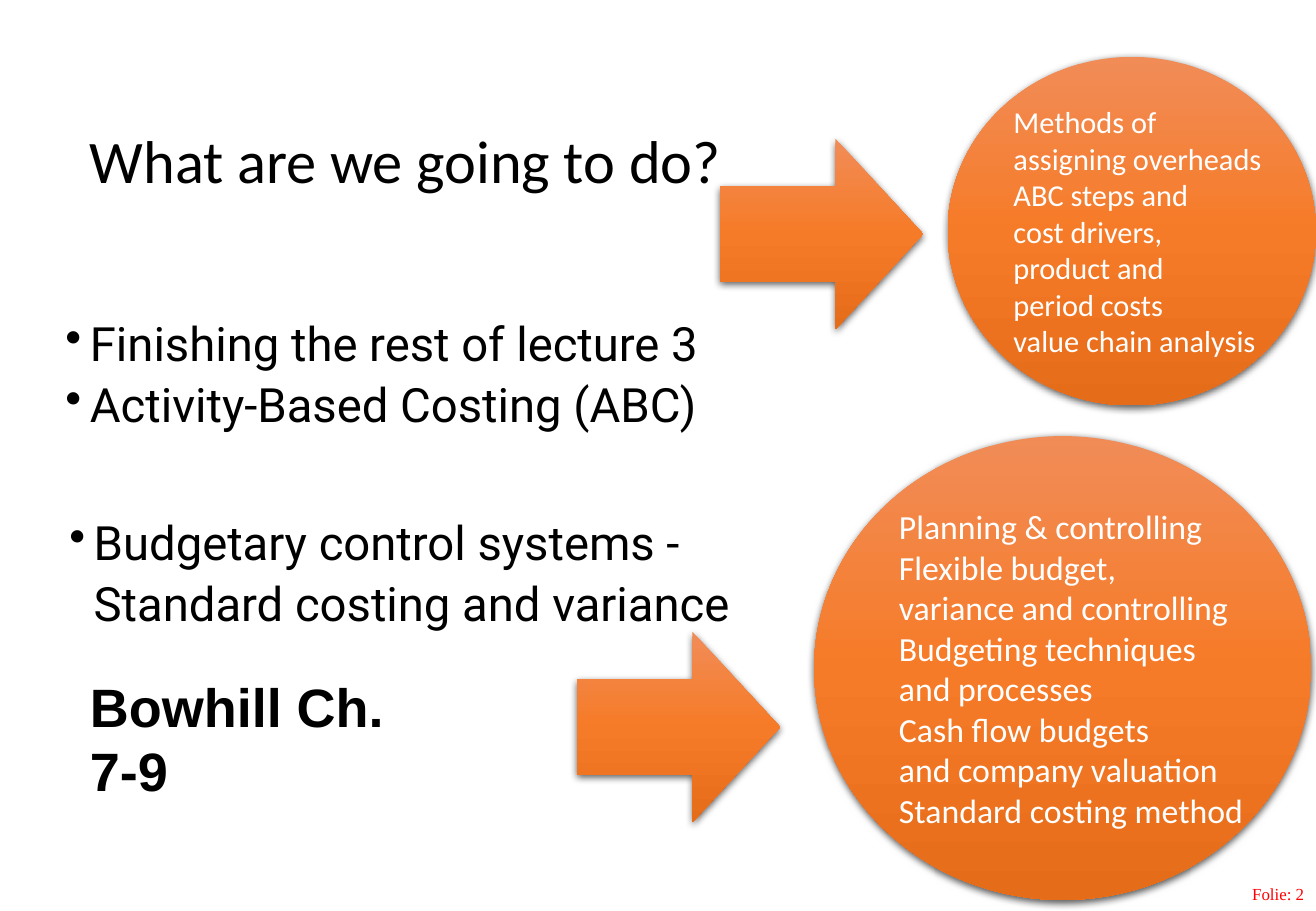
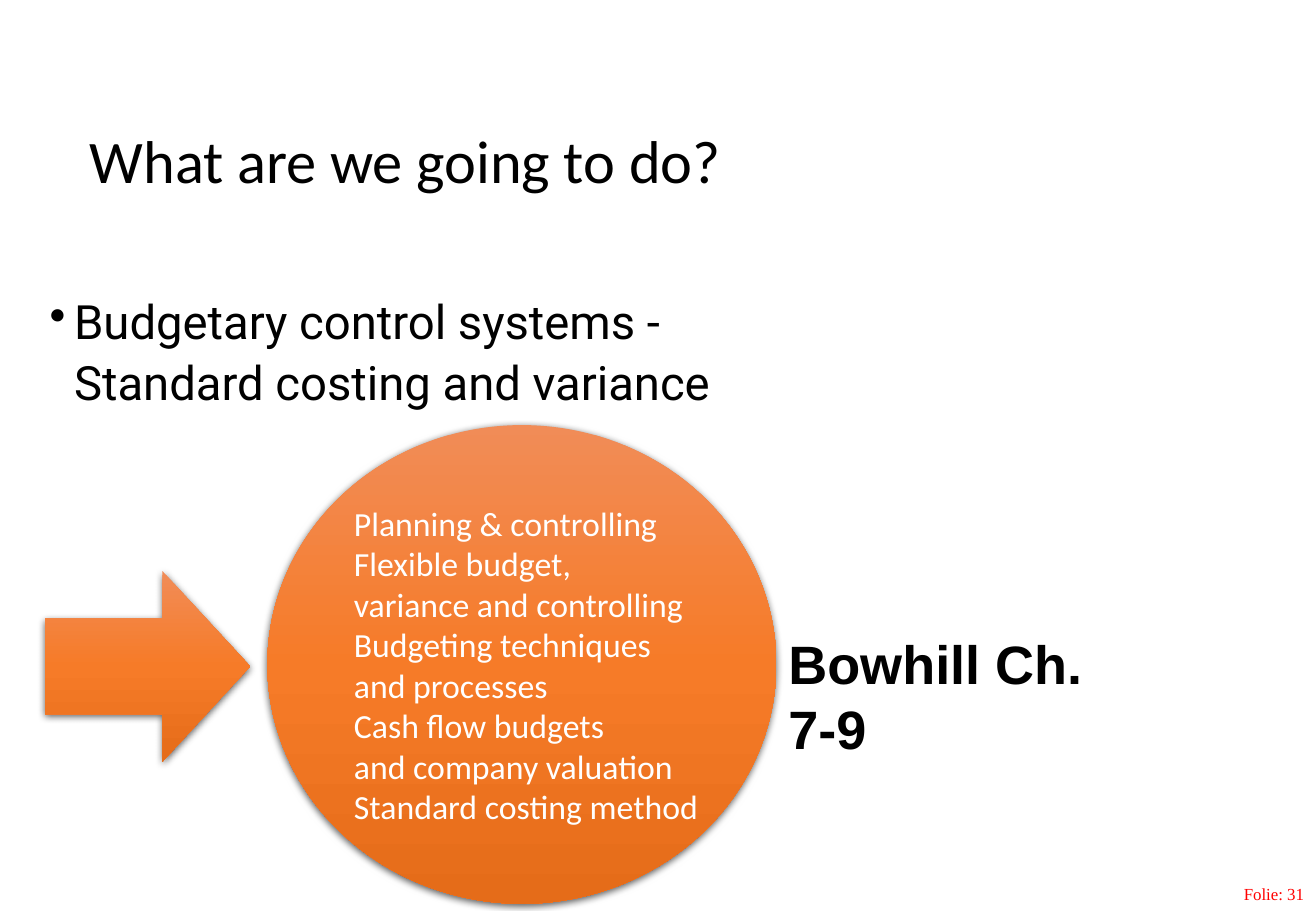
"""Build two agenda slides for a lecture on costing and budgeting."""
import pptx
import pptx.dml.color
import pptx.enum.shapes
import pptx.enum.text
import pptx.oxml
import pptx.oxml.ns
import pptx.util

Cm = pptx.util.Cm
Pt = pptx.util.Pt
ALIGN = pptx.enum.text.PP_ALIGN
ANCHOR = pptx.enum.text.MSO_ANCHOR
PRESET = pptx.enum.shapes.MSO_SHAPE

COLOURS = {
    "text": "000000",
    "inverse": "FFFFFF",
    "footer": "FF0000",
    "shadow": "000000",
    "light": "F18C57",
    "middle": "F67B28",
    "dark": "E56C19",
}
GRADIENT = {0: "light", 50: "middle", 100: "dark"}

FONTS = {
    "title": {"name": "Calibri", "size": Pt(35.8), "colour": "text"},
    "body": {"name": "Roboto", "size": Pt(28), "colour": "text"},
    "small circle": {"name": "Calibri", "size": Pt(18), "colour": "inverse"},
    "large circle": {"name": "Calibri", "size": Pt(20), "colour": "inverse"},
    "reading": {"name": "Arial", "size": Pt(32), "bold": True, "colour": "text"},
    "footer": {"name": "Times New Roman", "size": Pt(10), "colour": "footer"},
}

LECTURE_TOPICS = ["Finishing the rest of lecture 3", "Activity-Based Costing (ABC)"]
BUDGET_TOPIC = ["Budgetary control systems -", "Standard costing and variance"]
METHODS = [
    "Methods of\vassigning overheads",
    "ABC steps and\vcost drivers,\vproduct and\vperiod costs\vvalue chain analysis",
]
PLANNING = [
    "Planning & controlling\vFlexible budget,\vvariance and controlling",
    "Budgeting techniques",
    "and processes",
    "Cash flow budgets\vand company valuation",
    "Standard costing method",
]
HANGING = Cm(0.51)
ARROW_HEIGHT = 3.99


def write_text(frame, lines, style, **paragraph_format):
    """Fill a text frame with one paragraph per line."""
    frame.text = "\n".join(lines)
    for para in frame.paragraphs:
        for name, value in paragraph_format.items():
            setattr(para, name, value)
        for run in para.runs:
            for name, value in FONTS[style].items():
                if name == "colour":
                    run.font.color.rgb = pptx.dml.color.RGBColor.from_string(COLOURS[value])
                else:
                    setattr(run.font, name, value)


def add_text(page, place, lines, style, frame_format=None, **paragraph_format):
    """Add a wrapping text box and return its frame."""
    frame = page.shapes.add_textbox(*map(Cm, place)).text_frame
    for name, value in {"word_wrap": True, **(frame_format or {})}.items():
        setattr(frame, name, value)
    write_text(frame, lines, style, **paragraph_format)
    return frame


def add_topics(page, place, lines, bullets):
    """Add body lines, of which the first ones carry bullets."""
    sides = ("margin_left", "margin_top", "margin_right", "margin_bottom")
    frame = add_text(page, place, lines, "body", dict.fromkeys(sides, Cm(0.1)),
                     line_spacing=0.9)
    for index, para in enumerate(frame.paragraphs):
        para.space_before = Pt(6 if index else 0)
        properties = para._p.get_or_add_pPr()
        properties.set("marL", str(HANGING))
        if index < bullets:
            properties.set("indent", str(-HANGING))
            mark = pptx.oxml.parse_xml(
                f'<a:buChar {pptx.oxml.ns.nsdecls("a")} char="•"/>')
            properties.append(mark)


def add_glossy_shape(page, preset, place):
    """Add an orange gradient shape with a soft shadow below it."""
    shape = page.shapes.add_shape(preset, *map(Cm, place))
    shape.line.fill.background()
    shape.shadow.inherit = False
    namespace = pptx.oxml.ns.nsdecls("a")
    stops = "".join(
        f'<a:gs pos="{position * 1000}"><a:srgbClr val="{COLOURS[name]}"/></a:gs>'
        for position, name in GRADIENT.items())
    gradient = pptx.oxml.parse_xml(
        f'<a:gradFill {namespace} rotWithShape="1"><a:gsLst>{stops}</a:gsLst>'
        '<a:lin ang="5400000" scaled="0"/></a:gradFill>')
    shadow = pptx.oxml.parse_xml(
        f'<a:outerShdw {namespace} blurRad="{Pt(4.5)}" dist="{Pt(1.5)}" dir="5400000"'
        f' rotWithShape="0"><a:srgbClr val="{COLOURS["shadow"]}">'
        '<a:alpha val="63000"/></a:srgbClr></a:outerShdw>')
    properties = shape._element.spPr
    properties.find(pptx.oxml.ns.qn("a:ln")).addprevious(gradient)
    properties.find(pptx.oxml.ns.qn("a:effectLst")).append(shadow)
    return shape


def add_circle(page, place, lines, style):
    """Add a circle with left-aligned lines."""
    frame = add_glossy_shape(page, PRESET.OVAL, place).text_frame
    frame.word_wrap = False
    frame.vertical_anchor = ANCHOR.MIDDLE
    write_text(frame, lines, style, alignment=ALIGN.LEFT)


def add_arrow(page, left, top, width=4.24):
    """Add a block arrow pointing right."""
    arrow = add_glossy_shape(page, PRESET.RIGHT_ARROW, (left, top, width, ARROW_HEIGHT))
    arrow.adjustments[0] = 0.5
    arrow.adjustments[1] = 0.46


def add_reading(page, left, top):
    """Add the chapters to read."""
    add_text(page, (left, top, 7.62, 2.9), ["Bowhill Ch. 7-9"], "reading")


def add_page(deck, number):
    """Add a page with the shared title and the page number."""
    page = deck.slides.add_slide(deck.slide_layouts[6])
    add_text(page, (18.57, 18.36, 8.94, 0.69), [f"Folie: {number}"], "footer",
             alignment=ALIGN.RIGHT)
    add_text(page, (1.63, 1.83, 24.77, 3.18), ["What are we going to do?"], "title",
             {"vertical_anchor": ANCHOR.MIDDLE}, line_spacing=0.9)
    return page


def add_overview(deck):
    """Add the page with both topics."""
    page = add_page(deck, 2)
    add_topics(page, (1.27, 6.6, 13.79, 3), LECTURE_TOPICS, bullets=2)
    add_circle(page, (19.81, 1.19, 7.7, 7.29), METHODS, "small circle")
    add_arrow(page, 15.06, 2.9)
    add_topics(page, (1.35, 10.77, 14.45, 3), BUDGET_TOPIC, bullets=1)
    add_circle(page, (17.02, 9.12, 10.39, 9.7), PLANNING, "large circle")
    add_reading(page, 1.63, 13.95)
    add_arrow(page, 12.07, 13.21)


def add_budgeting(deck):
    """Add the page with the budgeting topic."""
    page = add_page(deck, 31)
    add_topics(page, (0.94, 6.14, 14.45, 3), BUDGET_TOPIC, bullets=1)
    add_circle(page, (5.59, 8.89, 10.64, 10.01), PLANNING, "large circle")
    add_arrow(page, 0.94, 11.94, 4.29)
    add_reading(page, 16.23, 13.06)


def main():
    """Build and save the deck."""
    deck = pptx.Presentation()
    deck.slide_width, deck.slide_height = Cm(27.51), Cm(19.05)
    add_overview(deck)
    add_budgeting(deck)
    deck.save("out.pptx")


if __name__ == "__main__":
    main()
